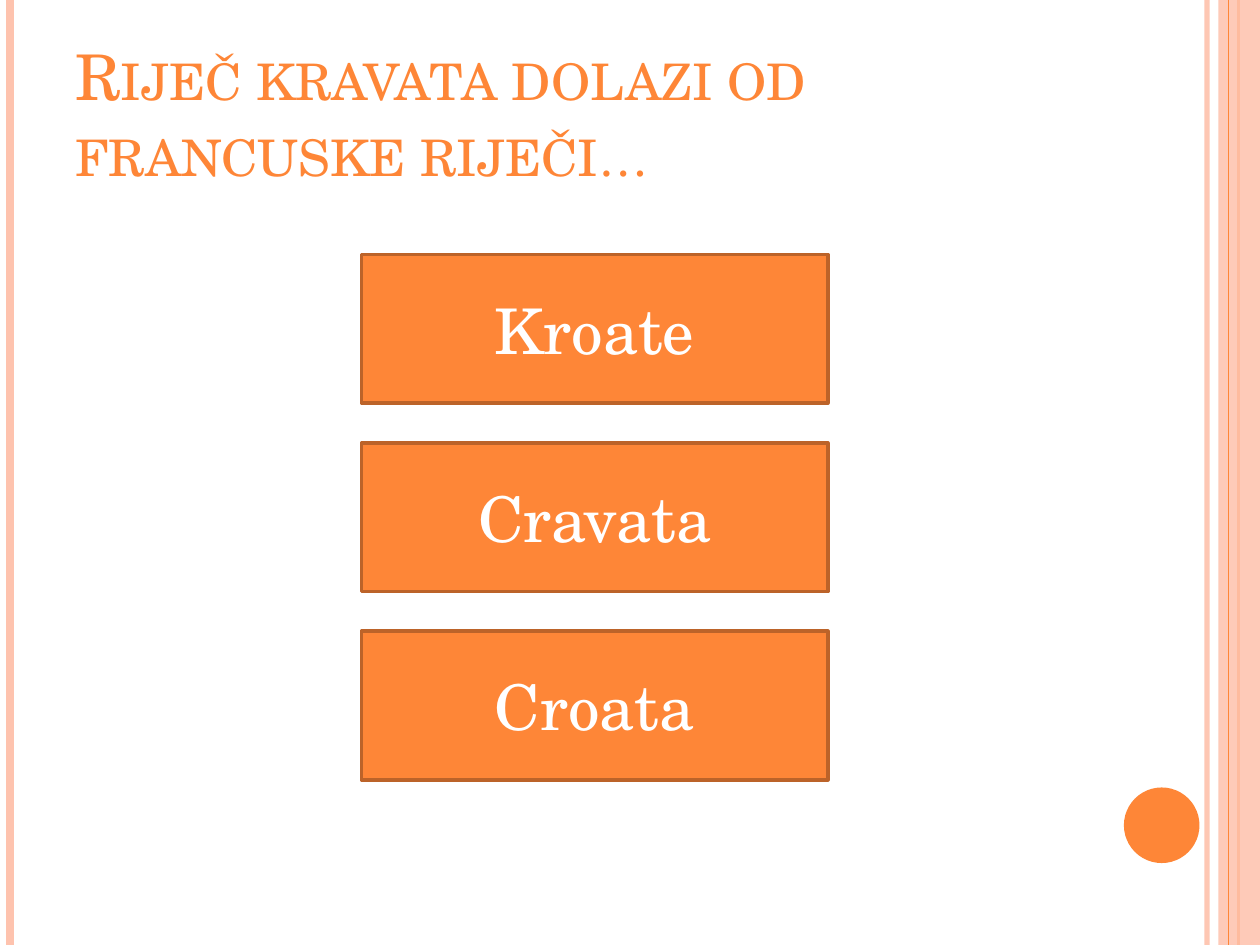
from lxml.etree import SubElement
from pptx import Presentation
from pptx.dml.color import RGBColor
from pptx.enum.shapes import MSO_CONNECTOR, MSO_SHAPE
from pptx.enum.text import MSO_ANCHOR, PP_ALIGN
from pptx.oxml.ns import qn
from pptx.util import Inches, Pt

ORANGE = RGBColor(0xFE, 0x86, 0x37)
DARK_ORANGE = RGBColor(0xBC, 0x63, 0x29)
PINK = RGBColor(0xFE, 0xC3, 0xAE)
WHITE = RGBColor(0xFF, 0xFF, 0xFF)
FONT = "TeX Gyre Schola"

TITLE = "Riječ kravata dolazi od francuske riječi…"
ANSWERS = ["Kroate", "Cravata", "Croata"]
FIRST_TOP, LAST_TOP = 2.02, 5.01

# x position, width in points, colour, opacity in percent
LINES_BEHIND_BAND = [
    (9.58, 3, PINK, 93),
    (0.08, 4.5, PINK, 100),
    (9.83, 1.5, ORANGE, 100),
]
LINES_OVER_BAND = [(9.75, 0.75, ORANGE, 100)]

deck = Presentation()
deck.slide_width, deck.slide_height = Inches(10), Inches(7.5)
page = deck.slides.add_slide(deck.slide_layouts[6])


def set_opacity(fill_parent, percent):
    color = fill_parent.find(qn("a:solidFill"))[0]
    SubElement(color, qn("a:alpha")).set("val", str(percent * 1000))


def add_vertical_line(x, width, color, opacity):
    line = page.shapes.add_connector(
        MSO_CONNECTOR.STRAIGHT, Inches(x), 0, Inches(x), deck.slide_height)
    line.line.width = Pt(width)
    line.line.color.rgb = color
    properties = line.element.spPr
    if opacity < 100:
        set_opacity(properties.find(qn("a:ln")), opacity)
    SubElement(properties, qn("a:effectLst"))


def add_filled_shape(kind, left, top, width, height, color):
    shape = page.shapes.add_shape(
        kind, Inches(left), Inches(top), Inches(width), Inches(height))
    shape.shadow.inherit = False
    shape.fill.solid()
    shape.fill.fore_color.rgb = color
    shape.line.fill.background()
    return shape


def write(box, text, color, anchor, align):
    frame = box.text_frame
    frame.word_wrap = True
    frame.vertical_anchor = anchor
    para = frame.paragraphs[0]
    para.alignment = align
    span = para.add_run()
    span.text = text
    span.font.name = FONT
    span.font.size = Pt(36)
    span.font.color.rgb = color
    return span


for line_style in LINES_BEHIND_BAND:
    add_vertical_line(*line_style)
band = add_filled_shape(MSO_SHAPE.RECTANGLE, 9.67, 0, 0.33, 7.5, PINK)
set_opacity(band.element.spPr, 87)
for line_style in LINES_OVER_BAND:
    add_vertical_line(*line_style)
add_filled_shape(MSO_SHAPE.OVAL, 8.92, 6.25, 0.6, 0.6, ORANGE)

title_box = page.shapes.add_textbox(
    Inches(0.5), Inches(0.3), Inches(8.17), Inches(1.25))
title_span = write(title_box, TITLE, ORANGE, MSO_ANCHOR.BOTTOM, PP_ALIGN.LEFT)
title_span.font._element.set("cap", "small")

pitch = (LAST_TOP - FIRST_TOP) / (len(ANSWERS) - 1)
for index, answer in enumerate(ANSWERS):
    button = add_filled_shape(
        MSO_SHAPE.ACTION_BUTTON_CUSTOM,
        2.87, FIRST_TOP + index * pitch, 3.7, 1.18, ORANGE)
    button.line.color.rgb = DARK_ORANGE
    button.line.width = Pt(2)
    write(button, answer, WHITE, MSO_ANCHOR.MIDDLE, PP_ALIGN.CENTER)

deck.save("out.pptx")
